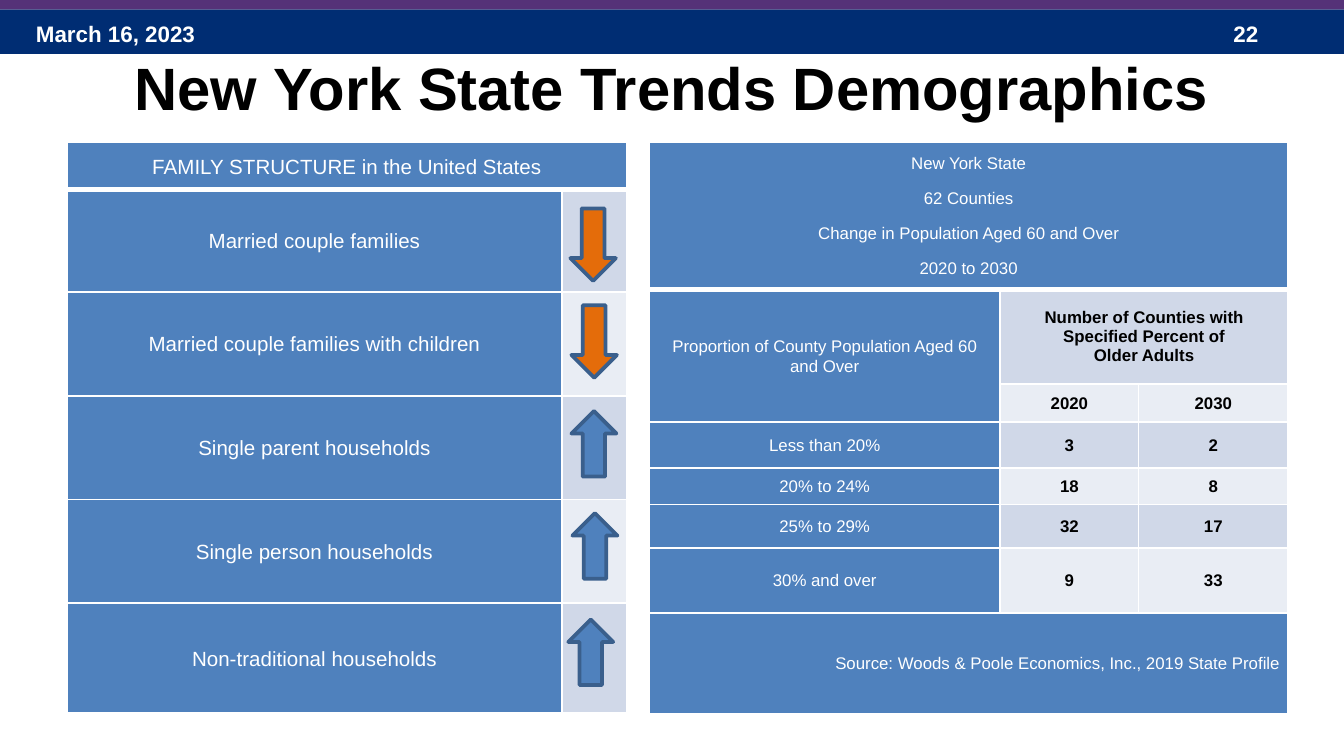
from pptx import Presentation
from pptx.dml.color import RGBColor
from pptx.enum.shapes import MSO_SHAPE
from pptx.enum.text import MSO_ANCHOR, PP_ALIGN
from pptx.oxml import parse_xml
from pptx.oxml.ns import nsdecls
from pptx.util import Cm, Pt


def colour(value):
    return RGBColor.from_string(value)


def write(text_frame, text, text_colour, font_format, paragraph_format):
    for index, line in enumerate(text.split("\n")):
        paragraph = text_frame.paragraphs[0] if index == 0 else text_frame.add_paragraph()
        for name, value in paragraph_format.items():
            setattr(paragraph, name, value)
        run = paragraph.add_run()
        run.text = line
        for name, value in font_format.items():
            setattr(run.font, name, value)
        run.font.color.rgb = colour(text_colour)


presentation = Presentation()
presentation.slide_width = Cm(25.4)
presentation.slide_height = Cm(14.29)
slide = presentation.slides.add_slide(presentation.slide_layouts[6])

for top, height, fill in [(0.18, 0.84, "002D73"), (-0.05, 0.23, "553278")]:
    band = slide.shapes.add_shape(MSO_SHAPE.RECTANGLE, 0, Cm(top), Cm(25.4), Cm(height))
    band.shadow.inherit = False
    band.fill.solid()
    band.fill.fore_color.rgb = colour(fill)
    band.line.fill.background()

labels = [
    ("March 16, 2023", 0.43, 0.25, 5.92, 0.76, 12, "FFFFFF", PP_ALIGN.LEFT),
    ("22", 23.06, 0.25, 1.9, 0.76, 12, "FFFFFF", PP_ALIGN.LEFT),
    ("New York State Trends Demographics", 1.27, 1.07, 22.86, 1.14, 32, "000000", PP_ALIGN.CENTER),
]
for text, left, top, width, height, size, text_colour, alignment in labels:
    label = slide.shapes.add_textbox(Cm(left), Cm(top), Cm(width), Cm(height))
    label.text_frame.word_wrap = True
    label.text_frame.vertical_anchor = MSO_ANCHOR.MIDDLE
    write(label.text_frame, text, text_colour,
          {"name": "Arial", "size": Pt(size), "bold": True}, {"alignment": alignment})

tables = [
    {
        "left": 12.27, "size": 9, "inset": 0.16,
        "columns": [6.63, 2.62, 2.82],
        "rows": [2.78, 1.79, 0.72, 0.87, 0.69, 0.82, 1.23, 1.9],
        "cells": [
            ["New York State\n62 Counties\nChange in Population Aged 60 and Over\n2020 to 2030", "", ""],
            ["Proportion of County Population Aged 60 and Over",
             "Number of Counties with Specified Percent of\nOlder Adults", ""],
            ["", "2020", "2030"],
            ["Less than 20%", "3", "2"],
            ["20% to 24%", "18", "8"],
            ["25% to 29%", "32", "17"],
            ["30% and over", "9", "33"],
            ["Source: Woods & Poole Economics, Inc., 2019 State Profile", "", ""],
        ],
        "merges": [(0, 0, 0, 2), (1, 0, 2, 0), (1, 1, 1, 2), (7, 0, 7, 2)],
        "full_rows": [0, 7],
    },
    {
        "left": 1.27, "size": 11, "inset": 0.18,
        "columns": [9.35, 1.23],
        "rows": [0.9, 1.93, 1.96, 1.96, 1.96, 2.08],
        "cells": [
            ["FAMILY STRUCTURE in the United States", ""],
            ["Married couple families", ""],
            ["Married couple families with children", ""],
            ["Single parent households", ""],
            ["Single person households", ""],
            ["Non-traditional households", ""],
        ],
        "merges": [(0, 0, 0, 1)],
        "full_rows": [0],
    },
]
for content in tables:
    columns, rows = content["columns"], content["rows"]
    table = slide.shapes.add_table(len(rows), len(columns), Cm(content["left"]), Cm(2.69),
                                   Cm(sum(columns)), Cm(sum(rows))).table
    for column, width in zip(table.columns, columns):
        column.width = Cm(width)
    for row, height in zip(table.rows, rows):
        row.height = Cm(height)
    for first_row, first_column, last_row, last_column in content["merges"]:
        table.cell(first_row, first_column).merge(table.cell(last_row, last_column))

    for row_index, texts in enumerate(content["cells"]):
        for column_index, text in enumerate(texts):
            cell = table.cell(row_index, column_index)
            cell_format = {
                "margin_left": Cm(content["inset"]), "margin_right": Cm(content["inset"]),
                "margin_top": 0, "margin_bottom": 0, "vertical_anchor": MSO_ANCHOR.MIDDLE,
            }
            for name, value in cell_format.items():
                setattr(cell, name, value)
            properties = cell._tc.get_or_add_tcPr()
            for side in ["lnL", "lnR", "lnT", "lnB"]:
                width = Pt(3 if row_index == 0 and side == "lnB" else 1)
                properties.append(parse_xml(
                    f'<a:{side} {nsdecls("a")} w="{width}"><a:solidFill>'
                    f'<a:srgbClr val="FFFFFF"/></a:solidFill></a:{side}>'))
            heading = column_index == 0 or row_index in content["full_rows"]
            banding = "D0D8E8" if row_index % 2 else "E9EDF4"
            cell.fill.solid()
            cell.fill.fore_color.rgb = colour("4F81BD" if heading else banding)
            if text:
                tight = row_index == 1 and not heading
                write(cell.text_frame, text, "FFFFFF" if heading else "000000",
                      {"name": "Arial", "size": Pt(content["size"]), "bold": not heading},
                      {"alignment": PP_ALIGN.RIGHT if text.startswith("Source") else PP_ALIGN.CENTER,
                       "line_spacing": 1.0 if tight else 1.07,
                       "space_after": Pt(0 if tight else 8)})

arrows = [
    (MSO_SHAPE.UP_ARROW, 10.74, 11.71, 0.85, 1.24, "4F81BD"),
    (MSO_SHAPE.UP_ARROW, 10.82, 9.7, 0.85, 1.24, "4F81BD"),
    (MSO_SHAPE.UP_ARROW, 10.8, 7.77, 0.85, 1.24, "4F81BD"),
    (MSO_SHAPE.DOWN_ARROW, 10.78, 3.94, 0.86, 1.37, "E46C0A"),
    (MSO_SHAPE.DOWN_ARROW, 10.8, 5.77, 0.86, 1.37, "E46C0A"),
]
for kind, left, top, width, height, fill in arrows:
    arrow = slide.shapes.add_shape(kind, Cm(left), Cm(top), Cm(width), Cm(height))
    arrow.shadow.inherit = False
    arrow.fill.solid()
    arrow.fill.fore_color.rgb = colour(fill)
    arrow.line.color.rgb = colour("3A5F8C")
    arrow.line.width = Pt(2)

presentation.save("out.pptx")
